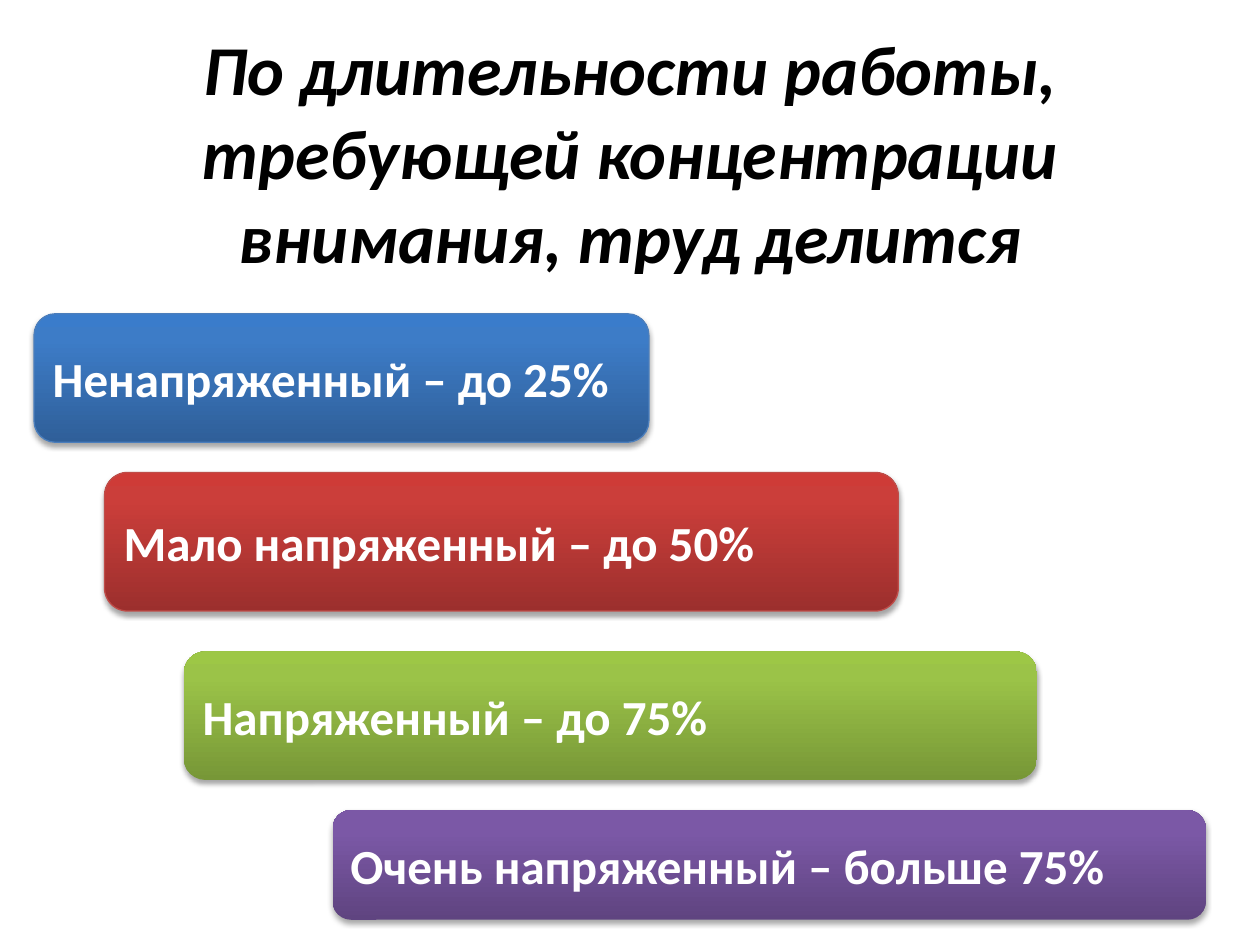
from copy import deepcopy
from dataclasses import dataclass

from lxml.etree import SubElement
from pptx import Presentation
from pptx.dml.color import RGBColor
from pptx.enum.shapes import MSO_SHAPE
from pptx.enum.text import MSO_ANCHOR, MSO_AUTO_SIZE, PP_ALIGN
from pptx.oxml.ns import qn
from pptx.util import Pt


@dataclass(frozen=True)
class Theme:
    """Colours, type sizes and font of the slide."""
    font: str = "Calibri"
    head: int = 40
    label: int = 28
    dark: str = "000000"
    light: str = "FFFFFF"
    blue: tuple = ("2F5F99", "3D7CC7", "3A7CCB")
    red: tuple = ("9C2F2D", "CB3E3A", "CE3B37")
    green: tuple = ("779737", "9BC348", "9DC746")
    purple: tuple = ("5F4480", "7B58A6", "7C57A8")
    blue_edge: str = "4B7EBC"
    red_edge: str = "BF4C48"


THEME = Theme()

BARS = [
    ("Ненапряженный – до 25%", (19.44, 179.28, 351.36, 73.44), THEME.blue, THEME.blue_edge),
    ("Мало напряженный – до 50%", (59.76, 270, 453.6, 79.2), THEME.red, THEME.red_edge),
    ("Напряженный – до 75%", (105.12, 372.24, 487.44, 73.44), THEME.green, None),
    ("Очень напряженный – больше 75%", (190.08, 462.96, 498.96, 62.64), THEME.purple, None),
]


def write(shape, text, size, color, align, italic=False):
    """Put one bold, vertically centred paragraph in a shape."""
    frame = shape.text_frame
    frame.word_wrap = True
    frame.auto_size = MSO_AUTO_SIZE.NONE
    frame.vertical_anchor = MSO_ANCHOR.MIDDLE
    para = frame.paragraphs[0]
    para.text = text
    para.alignment = align
    font = para.font
    font.name, font.size = THEME.font, Pt(size)
    font.bold, font.italic = True, italic
    font.color.rgb = RGBColor.from_string(color)


def shade(shape, colors):
    """Fill a shape with a three-stop gradient rising from its foot."""
    fill = shape.fill
    fill.gradient()
    fill.gradient_angle = 90
    stops = shape.element.spPr.find(qn("a:gradFill")).find(qn("a:gsLst"))
    stops.insert(1, deepcopy(stops[0]))
    for stop, color, place in zip(fill.gradient_stops, colors, (0, 0.8, 1)):
        stop.color.rgb = RGBColor.from_string(color)
        stop.position = place


def drop(shape):
    """Give a shape a soft shadow straight below it."""
    shape.shadow.inherit = False
    effects = shape.element.spPr.find(qn("a:effectLst"))
    outer = SubElement(effects, qn("a:outerShdw"), blurRad=str(Pt(3.1)),
                       dist=str(Pt(1.8)), dir="5400000", rotWithShape="0")
    color = SubElement(outer, qn("a:srgbClr"), val=THEME.dark)
    SubElement(color, qn("a:alpha"), val="35000")


def add_bar(slide, text, box, colors, edge):
    """Add one rounded, shaded bar with its label."""
    bar = slide.shapes.add_shape(MSO_SHAPE.ROUNDED_RECTANGLE, *map(Pt, box))
    shade(bar, colors)
    if edge:
        bar.line.color.rgb = RGBColor.from_string(edge)
        bar.line.width = Pt(0.75)
    else:
        bar.line.fill.background()
    drop(bar)
    write(bar, text, THEME.label, THEME.light, PP_ALIGN.LEFT)


def add_title(slide, text):
    """Place and format the slide title."""
    title = slide.shapes.title
    title.left, title.top, title.width, title.height = map(Pt, (36, 21.6, 648, 129.6))
    write(title, text, THEME.head, THEME.dark, PP_ALIGN.CENTER, italic=True)


def main():
    """Build the slide and save it."""
    deck = Presentation()
    deck.slide_width, deck.slide_height = Pt(720), Pt(540)
    slide = deck.slides.add_slide(deck.slide_layouts[5])
    add_title(slide, "По длительности работы, требующей концентрации внимания, труд делится")
    for bar in BARS:
        add_bar(slide, *bar)
    deck.save("out.pptx")


if __name__ == "__main__":
    main()
